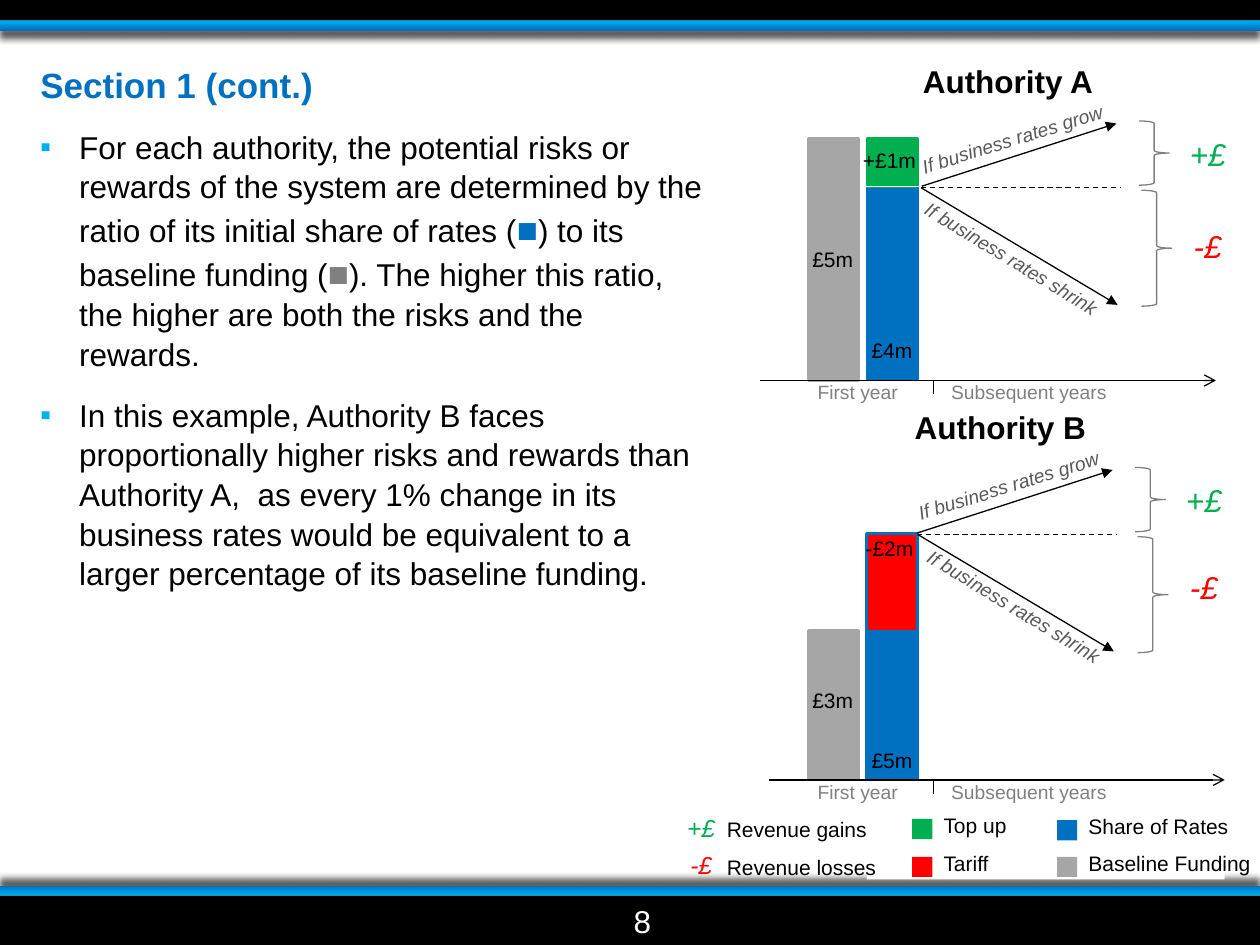
from lxml import etree
from pptx import Presentation
from pptx.dml.color import RGBColor
from pptx.enum.dml import MSO_LINE
from pptx.enum.shapes import MSO_CONNECTOR, MSO_SHAPE
from pptx.enum.text import MSO_ANCHOR, MSO_AUTO_SIZE, PP_ALIGN
from pptx.oxml.ns import qn
from pptx.util import Inches, Pt

RECT, BRACE = MSO_SHAPE.RECTANGLE, MSO_SHAPE.RIGHT_BRACE
STRAIGHT, DASH = MSO_CONNECTOR.STRAIGHT, MSO_LINE.DASH
LEFT, CENTER = PP_ALIGN.LEFT, PP_ALIGN.CENTER
TOP, NO_FIT = MSO_ANCHOR.TOP, MSO_AUTO_SIZE.NONE

BLACK = RGBColor(0x00, 0x00, 0x00)
WHITE = RGBColor(0xFF, 0xFF, 0xFF)
BLUE = RGBColor(0x00, 0x70, 0xC0)
SKY = RGBColor(0x00, 0xB0, 0xF0)
GREEN = RGBColor(0x00, 0xB0, 0x50)
RED = RGBColor(0xFF, 0x00, 0x00)
SILVER = RGBColor(0xA6, 0xA6, 0xA6)
GRAY = RGBColor(0x80, 0x80, 0x80)
DARK = RGBColor(0x59, 0x59, 0x59)


def sub(parent, tag, **attrs):
    return etree.SubElement(parent, qn(tag), attrs)


class Builder:
    font = "Arial"
    line_spacing = 1.05

    def __init__(self, s):
        self.s = s

    def style(self, r, size, color, bold=False, italic=False):
        f = r.font
        f.name, f.size, f.bold, f.italic = self.font, Pt(size), bold, italic
        f.color.rgb = color

    def title(self, text, x, y, w, h):
        sp = self.s.shapes.title
        sp.left, sp.top, sp.width, sp.height = map(Inches, (x, y, w, h))
        tf = sp.text_frame
        tf.text = text
        tf.vertical_anchor, tf.auto_size = TOP, NO_FIT
        p = tf.paragraphs[0]
        p.alignment, p.line_spacing = LEFT, self.line_spacing
        self.style(p.runs[0], 20, BLUE, bold=True)

    def shape(self, x, y, w, h, fill=None, line=None, width=0.75, kind=RECT):
        sp = self.s.shapes.add_shape(kind, *map(Inches, (x, y, w, h)))
        sp.shadow.inherit = False
        if fill is None:
            sp.fill.background()
        else:
            sp.fill.solid()
            sp.fill.fore_color.rgb = fill
        if line is None:
            sp.line.fill.background()
        else:
            sp.line.color.rgb = line
            sp.line.width = Pt(width)
        return sp

    def band(self, y, rotation, shadow_angle):
        """Blue gradient strip that casts a soft shadow towards the content."""
        sp = self.shape(0, y, 10, 0.08)
        sp.rotation = rotation
        sp.fill.gradient()
        sp.fill.gradient_angle = 270
        for stop, color in zip(sp.fill.gradient_stops, (SKY, BLUE)):
            stop.color.rgb = color
        effects = sp._element.spPr.find(qn("a:effectLst"))
        shadow = sub(effects, "a:outerShdw", blurRad=str(Pt(4)), dist=str(Pt(4)),
                     dir=str(shadow_angle * 60000), rotWithShape="0")
        sub(sub(shadow, "a:srgbClr", val="000000"), "a:alpha", val="65000")

    def line(self, x1, y1, x2, y2, color=BLACK, dash=None, head=None):
        c = self.s.shapes.add_connector(STRAIGHT, *map(Inches, (x1, y1, x2, y2)))
        c.line.color.rgb = color
        c.line.width = Pt(0.75)
        if dash:
            c.line.dash_style = dash
        spPr = c._element.spPr
        if head:
            sub(spPr.find(qn("a:ln")), "a:tailEnd", type=head)
        sub(spPr, "a:effectLst")

    def text(self, text, x, y, w, h=0.3, size=12, color=BLACK, align=LEFT,
             rotation=0, **emphasis):
        sp = self.s.shapes.add_textbox(*map(Inches, (x, y, w, h)))
        sp.rotation = rotation
        tf = sp.text_frame
        tf.text, tf.word_wrap = text, True
        p = tf.paragraphs[0]
        p.alignment = align
        self.style(p.runs[0], size, color, **emphasis)

    def bullets(self, items, x, y, w, h):
        """Each item is a list of (text, size, color) runs."""
        tf = self.s.shapes.add_textbox(*map(Inches, (x, y, w, h))).text_frame
        tf.word_wrap = True
        for i, runs in enumerate(items):
            p = tf.add_paragraph() if i else tf.paragraphs[0]
            pPr = p._p.get_or_add_pPr()
            pPr.set("marL", str(Inches(0.31)))
            pPr.set("indent", str(-Inches(0.31)))
            sub(sub(pPr, "a:buClr"), "a:srgbClr", val=str(SKY))
            sub(pPr, "a:buFont", typeface=self.font)
            sub(pPr, "a:buChar", char="▪")
            p.line_spacing = self.line_spacing
            p.space_before, p.space_after = Pt(6 if i else 0), Pt(6)
            for text, size, color in runs:
                r = p.add_run()
                r.text = text
                self.style(r, size, color)

    def authority(self, name, name_x, name_y, pivot, bars, values, axis_x, axis_y,
                  loss_y, shrink_at):
        """Bars of the first year, then growth and decline fanning from the pivot."""
        px, py = pivot
        for bar in bars:
            self.shape(*bar)
        self.text(name, name_x, name_y, 1.8, 0.4, 18, align=CENTER, bold=True)
        for value, x, y in values:
            self.text(value, x, y, 0.66, align=CENTER)

        self.line(px, py, px + 1.55, py - 0.5, head="triangle")
        self.line(px, py + 0.01, px + 1.58, py + 0.01, dash=DASH)
        self.line(px, py + 0.01, px + 1.56, py + 0.94, head="triangle")
        self.shape(px + 1.73, py - 0.52, 0.24, 0.51, line=GRAY, kind=BRACE)
        self.shape(px + 1.75, py + 0.03, 0.24, 0.92, line=GRAY, kind=BRACE)
        for sign, y, color in (("+£", py - 0.46, GREEN), ("-£", loss_y, RED)):
            self.text(sign, px + 1.97, y, 0.61, 0.4, 18, color, CENTER, italic=True)
        for trend, x, y, angle in (("grow", px - 0.22, py - 0.52, 342.7),
                                   ("shrink", *shrink_at, 31.3)):
            self.text(f"If business rates {trend}", x, y, 1.89, 0.29, 11, DARK,
                      CENTER, angle, italic=True)

        self.line(axis_x, axis_y, axis_x + 3.62, axis_y, head="arrow")
        self.line(7.41, axis_y, 7.41, axis_y + 0.11)
        for period, x, w in (("First year", 6.39, 0.97), ("Subsequent years", 7.45, 1.72)):
            self.text(period, x, axis_y - 0.05, w, 0.29, 11, GRAY)


def main():
    prs = Presentation()
    prs.slide_width, prs.slide_height = Inches(10), Inches(7.5)
    b = Builder(prs.slides.add_slide(prs.slide_layouts[5]))

    b.band(7.03, 180, 270)
    b.band(0.16, 0, 90)
    b.shape(0, 0, 10, 0.16, BLACK)
    b.shape(0, 7.11, 10, 0.39, BLACK)
    b.text("8", 4.93, 7.11, 2.33, 0.39, 18, WHITE)

    b.title("Section 1 (cont.)", 0.22, 0.44, 5.49, 0.45)
    b.bullets([
        [("For each authority, the potential risks or rewards of the system are "
          "determined by the ratio of its initial share of rates (", 18, BLACK),
         ("■", 20, BLUE),
         (") to its baseline funding (", 18, BLACK),
         ("■", 20, GRAY),
         ("). The higher this ratio, the higher are both the risks and the rewards.",
          18, BLACK)],
        [("In this example, Authority B faces proportionally higher risks and rewards "
          "than Authority A,  as every 1% change in its business rates would be "
          "equivalent to a larger percentage of its baseline funding.", 18, BLACK)],
    ], 0.22, 0.95, 5.49, 3.66)

    b.authority(
        "Authority A", 7.1, 0.44, (7.31, 1.48),
        bars=[(6.89, 1.47, 0.39, 1.54, BLUE, BLUE, 2),
              (6.89, 1.1, 0.39, 0.38, GREEN, GREEN, 2),
              (6.42, 1.1, 0.39, 1.92, SILVER, SILVER, 2)],
        values=[("£5m", 6.28, 1.91), ("£4m", 6.75, 2.63), ("+£1m", 6.73, 1.12)],
        axis_x=6.03, axis_y=3.02, loss_y=1.75, shrink_at=(7.08, 1.91))
    b.line(6.85, 1.48, 7.32, 1.48, WHITE)

    b.authority(
        "Authority B", 7.04, 3.19, (7.28, 4.23),
        bars=[(6.88, 4.24, 0.4, 1.94, BLUE, BLUE, 2),
              (6.88, 4.24, 0.4, 0.77, RED, BLUE, 1),
              (6.42, 5.01, 0.39, 1.17, SILVER, SILVER, 2)],
        values=[("£3m", 6.28, 5.41), ("£5m", 6.75, 5.88), ("-£2m", 6.73, 4.2)],
        axis_x=6.1, axis_y=6.19, loss_y=4.46, shrink_at=(7.1, 4.67))

    b.shape(6.88, 6.43, 2.84, 0.55, WHITE)
    for label, x, y, color in (("Top up", 7.24, 6.5, GREEN),
                               ("Tariff", 7.24, 6.8, RED),
                               ("Share of Rates", 8.39, 6.51, BLUE),
                               ("Baseline Funding", 8.39, 6.8, SILVER)):
        b.shape(x, y, 0.16, 0.16, color)
        b.text(label, x + 0.15, y - 0.1, 1.5)
    for sign, label, y, color in (("+£", "Revenue gains", 6.4, GREEN),
                                  ("-£", "Revenue losses", 6.7, RED)):
        b.text(sign, 5.26, y, 0.61, 0.34, 14, color, CENTER, italic=True)
        b.text(label, 5.67, y + 0.03, 1.52)

    prs.save("out.pptx")


if __name__ == "__main__":
    main()
